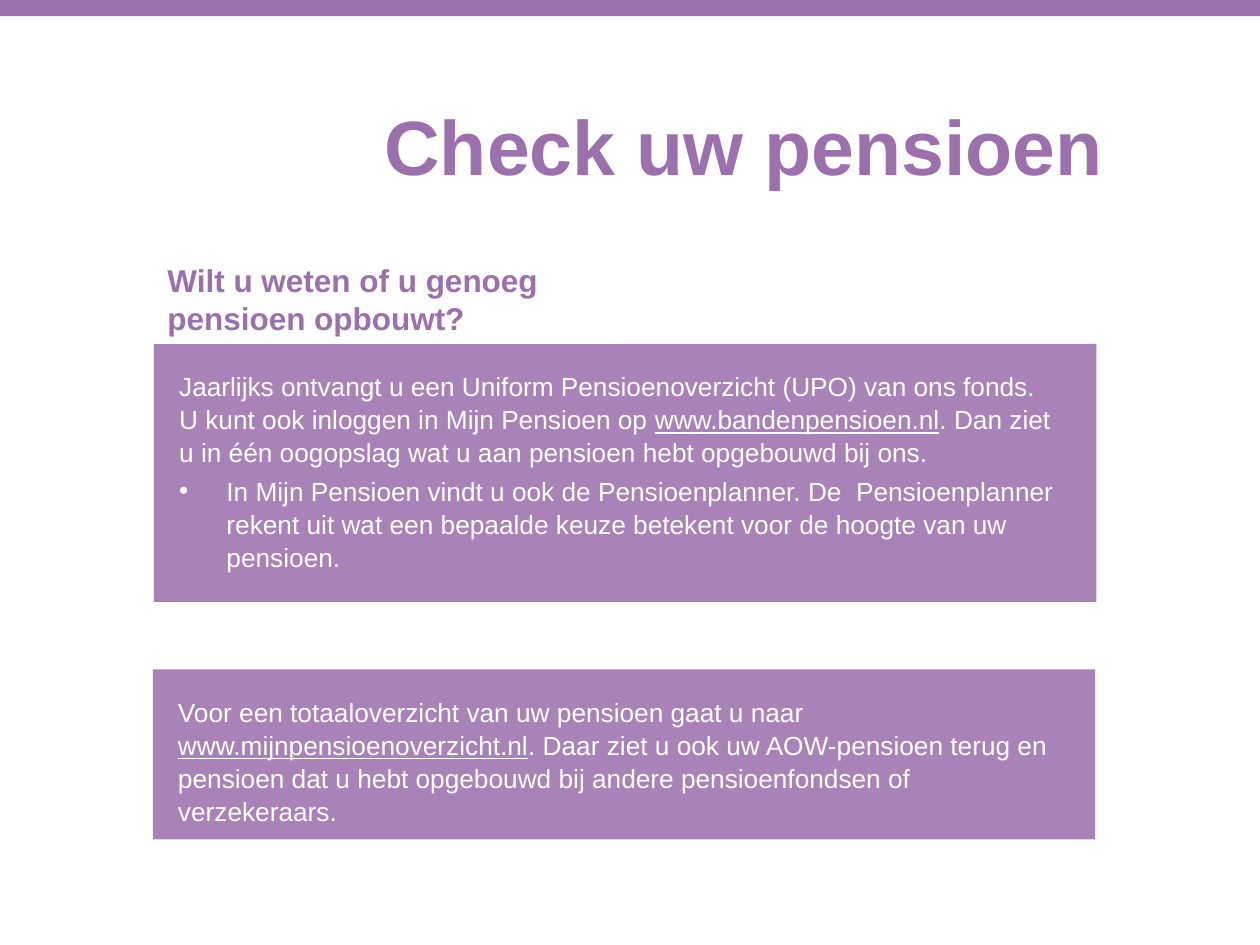
from lxml.etree import SubElement
from pptx import Presentation
from pptx.dml.color import RGBColor
from pptx.enum.shapes import MSO_SHAPE
from pptx.enum.text import MSO_ANCHOR, PP_ALIGN
from pptx.oxml.ns import qn
from pptx.util import Pt

PURPLE, WHITE = "9C6FAD", "FFFFFF"


def color(code):
    return RGBColor.from_string(code)


class Page:
    """Holds the style and the slide being drawn."""

    font = "Arial"

    def __init__(self, deck):
        self.slide = deck.slides.add_slide(deck.slide_layouts[6])

    def block(self, x, y, w, h, fill, alpha=100):
        box = self.slide.shapes.add_shape(
            MSO_SHAPE.RECTANGLE, Pt(x), Pt(y), Pt(w), Pt(h))
        box.shadow.inherit = False
        box.line.fill.background()
        box.fill.solid()
        box.fill.fore_color.rgb = color(fill)
        if alpha < 100:
            tone = box._element.spPr.find(qn("a:solidFill"))[0]
            SubElement(tone, qn("a:alpha"), val=str(alpha * 1000))
        return box

    def label(self, x, y, w, h):
        return self.slide.shapes.add_textbox(Pt(x), Pt(y), Pt(w), Pt(h))

    def frame(self, box, side, top, anchor=MSO_ANCHOR.TOP):
        frame = box.text_frame
        frame.word_wrap = True
        frame.vertical_anchor = anchor
        frame.margin_left = frame.margin_right = Pt(side)
        frame.margin_top = frame.margin_bottom = Pt(top)
        return frame

    def words(self, para, parts, size, tint, bold=False, align=PP_ALIGN.LEFT):
        para.alignment = align
        font = para.font
        font.name, font.size, font.bold = self.font, Pt(size), bold
        font.color.rgb = color(tint)
        for part in parts:
            for i, line in enumerate(part.split("\n")):
                if i:
                    para.add_line_break()
                run = para.add_run()
                run.text = line
                if line.startswith("www."):
                    run.font.underline = True

    def bullet(self, para, indent):
        props = para._p.get_or_add_pPr()
        props.set("marL", str(Pt(indent)))
        props.set("indent", str(-Pt(indent)))
        tone = SubElement(props, qn("a:buClr"))
        SubElement(tone, qn("a:srgbClr"), val=WHITE)
        SubElement(props, qn("a:buFont"), typeface=self.font)
        SubElement(props, qn("a:buChar"), char="•")

    def panel(self, x, y, w, h, intro, point=None):
        frame = self.frame(self.block(x, y, w, h, PURPLE, 86), 14.4, 14.4)
        para = frame.paragraphs[0]
        para.line_spacing = 1.05
        self.words(para, intro, 15, WHITE)
        if point:
            para = frame.add_paragraph()
            para.line_spacing, para.space_before = 1.05, Pt(3)
            self.bullet(para, 27)
            self.words(para, [point], 15, WHITE)

    def heading(self, x, y, w, h, text):
        frame = self.frame(self.block(x, y, w, h, WHITE), 7.2, 3.6,
                           MSO_ANCHOR.MIDDLE)
        self.words(frame.paragraphs[0], [text], 18, PURPLE, True)

    def title(self, x, y, w, h, text):
        frame = self.frame(self.label(x, y, w, h), 7.2, 7.2)
        self.words(frame.paragraphs[0], [text], 44, PURPLE, True,
                   PP_ALIGN.RIGHT)


def main():
    deck = Presentation()
    deck.slide_width, deck.slide_height = Pt(720), Pt(540)
    page = Page(deck)
    page.block(0, 0, 720, 9.2, PURPLE)
    page.panel(
        88, 196.5, 538.5, 147.5,
        ["Jaarlijks ontvangt u een Uniform Pensioenoverzicht (UPO) van ons "
         "fonds.\nU kunt ook inloggen in Mijn Pensioen op ",
         "www.bandenpensioen.nl",
         ". Dan ziet u in één oogopslag wat u aan pensioen hebt opgebouwd "
         "bij ons."],
        "In Mijn Pensioen vindt u ook de Pensioenplanner. De  "
        "Pensioenplanner rekent uit wat een bepaalde keuze betekent voor de "
        "hoogte van uw pensioen.")
    page.heading(88.6, 145.4, 266.4, 51.1,
                 "Wilt u weten of u genoeg\npensioen opbouwt?")
    page.panel(
        87.3, 382.5, 538.5, 97.2,
        ["Voor een totaaloverzicht van uw pensioen gaat u naar ",
         "www.mijnpensioenoverzicht.nl",
         ". Daar ziet u ook uw AOW-pensioen terug en pensioen dat u hebt "
         "opgebouwd bij andere pensioenfondsen of verzekeraars."])
    page.title(37.4, 49, 600.5, 79.2, "Check uw pensioen")
    deck.save("out.pptx")


if __name__ == "__main__":
    main()
